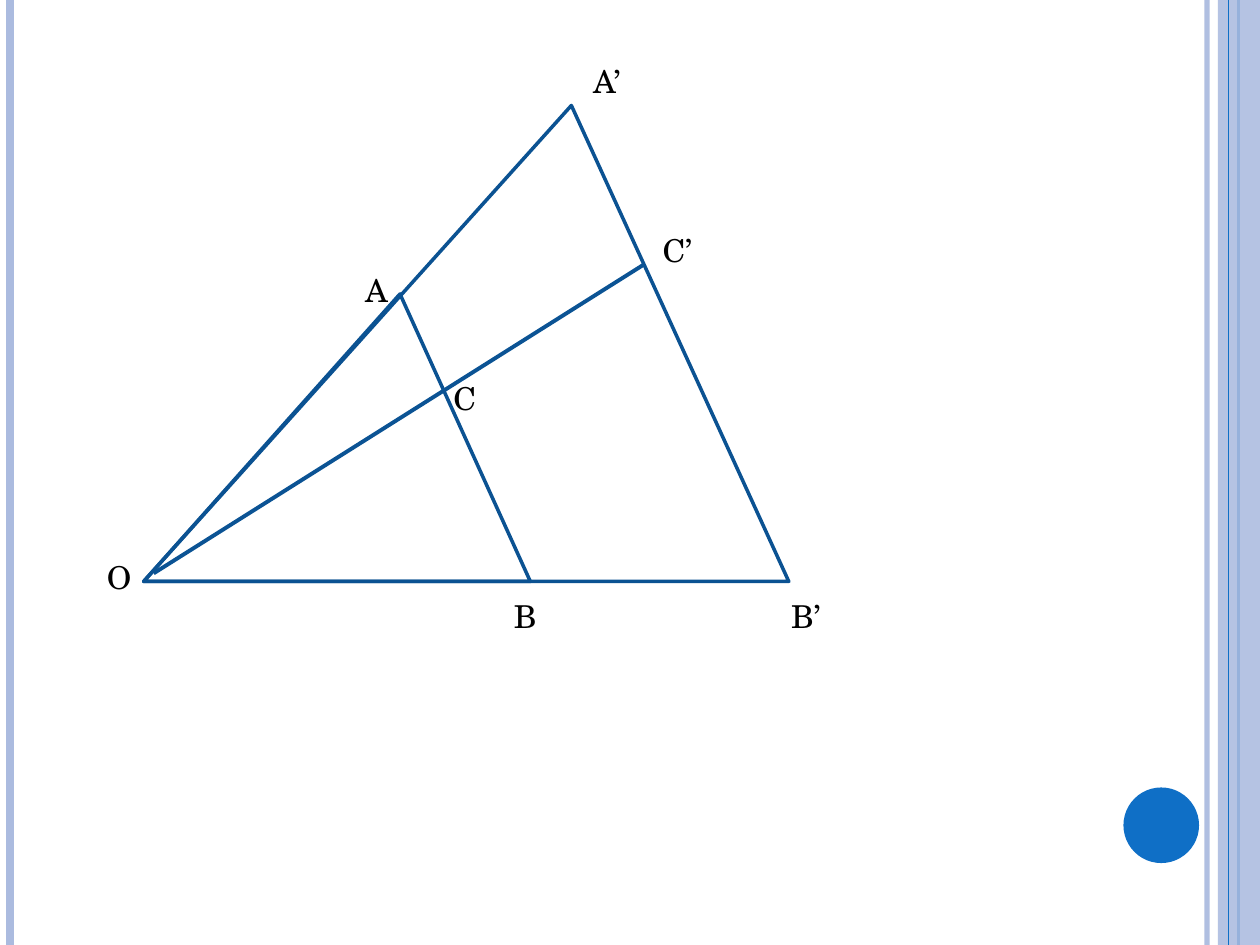
from lxml.etree import SubElement
from pptx import Presentation
from pptx.dml.color import RGBColor
from pptx.enum.shapes import MSO_CONNECTOR as CONN, MSO_SHAPE as SHAPE
from pptx.enum.text import MSO_AUTO_SIZE as FIT
from pptx.oxml.ns import qn
from pptx.util import Pt

COLORS = {"band": "ABBBDF", "accent": "0F6FC6", "edge": "0B5292",
          "ray": "0B5394", "text": "000000"}
RGB = {name: RGBColor.from_string(value) for name, value in COLORS.items()}
WIDTH, HEIGHT = 720, 540

prs = Presentation()
prs.slide_width, prs.slide_height = Pt(WIDTH), Pt(HEIGHT)
s = prs.slides.add_slide(prs.slide_layouts[6])


def set_alpha(fill, percent):
    color = fill._xPr.find(qn("a:solidFill"))[0]
    SubElement(color, qn("a:alpha"), val=str(percent * 1000))


def add_line(x1, y1, x2, y2, color, width):
    line = s.shapes.add_connector(CONN.STRAIGHT, Pt(x1), Pt(y1), Pt(x2), Pt(y2))
    line.line.color.rgb = RGB[color]
    line.line.width = Pt(width)
    SubElement(line._element.spPr, qn("a:effectLst"))
    return line


# Vertical rules of the frame; the later band covers the first accent rule
edge_rule = add_line(689.76, 0, 689.76, HEIGHT, "band", 3)
set_alpha(edge_rule.line.fill, 93)
add_line(5.76, 0, 5.76, HEIGHT, "band", 4.5)
add_line(707.76, 0, 707.76, HEIGHT, "accent", 1.5)

# Right-hand band
band = s.shapes.add_shape(SHAPE.RECTANGLE, Pt(696), Pt(0), Pt(24), Pt(HEIGHT))
band.shadow.inherit = False
band.fill.solid()
band.fill.fore_color.rgb = RGB["band"]
set_alpha(band.fill, 87)
band.line.fill.background()
add_line(702, 0, 702, HEIGHT, "accent", 0.75)

# Page-number disc
disc = s.shapes.add_shape(SHAPE.OVAL, Pt(642), Pt(450), Pt(43.2), Pt(43.2))
disc.shadow.inherit = False
disc.fill.solid()
disc.fill.fore_color.rgb = RGB["accent"]
disc.line.fill.background()

# Similar triangles OAB and OA'B', sharing the corner O
origin_x, base_y = 82.08, 332.3
for width, height in [(221, 164.3), (368.64, 272)]:
    tri = s.shapes.add_shape(SHAPE.ISOSCELES_TRIANGLE, Pt(origin_x),
                             Pt(base_y - height), Pt(width), Pt(height))
    tri.adjustments[0] = 0.663
    tri.shadow.inherit = False
    tri.fill.background()
    tri.line.color.rgb = RGB["edge"]
    tri.line.width = Pt(2)

# Ray from O through C to C'
add_line(87.84, 327.6, 367.92, 151.2, "ray", 2.25)

# Point labels
labels = [("O", 54, 315.4), ("B’", 445, 337.7), ("C’", 371.5, 128.2),
          ("C", 252, 213.1), ("B", 286.6, 337.7), ("A", 201.6, 151.2),
          ("A’", 331.9, 31.7)]
font_format = {"name": "TeX Gyre Schola", "size": Pt(18)}
for label, x, y in labels:
    tf = s.shapes.add_textbox(Pt(x), Pt(y), Pt(39.6), Pt(28.8)).text_frame
    tf.word_wrap = True
    tf.auto_size = FIT.SHAPE_TO_FIT_TEXT
    r = tf.paragraphs[0].add_run()
    r.text = label
    for key, value in font_format.items():
        setattr(r.font, key, value)
    r.font.color.rgb = RGB["text"]

prs.save("out.pptx")
